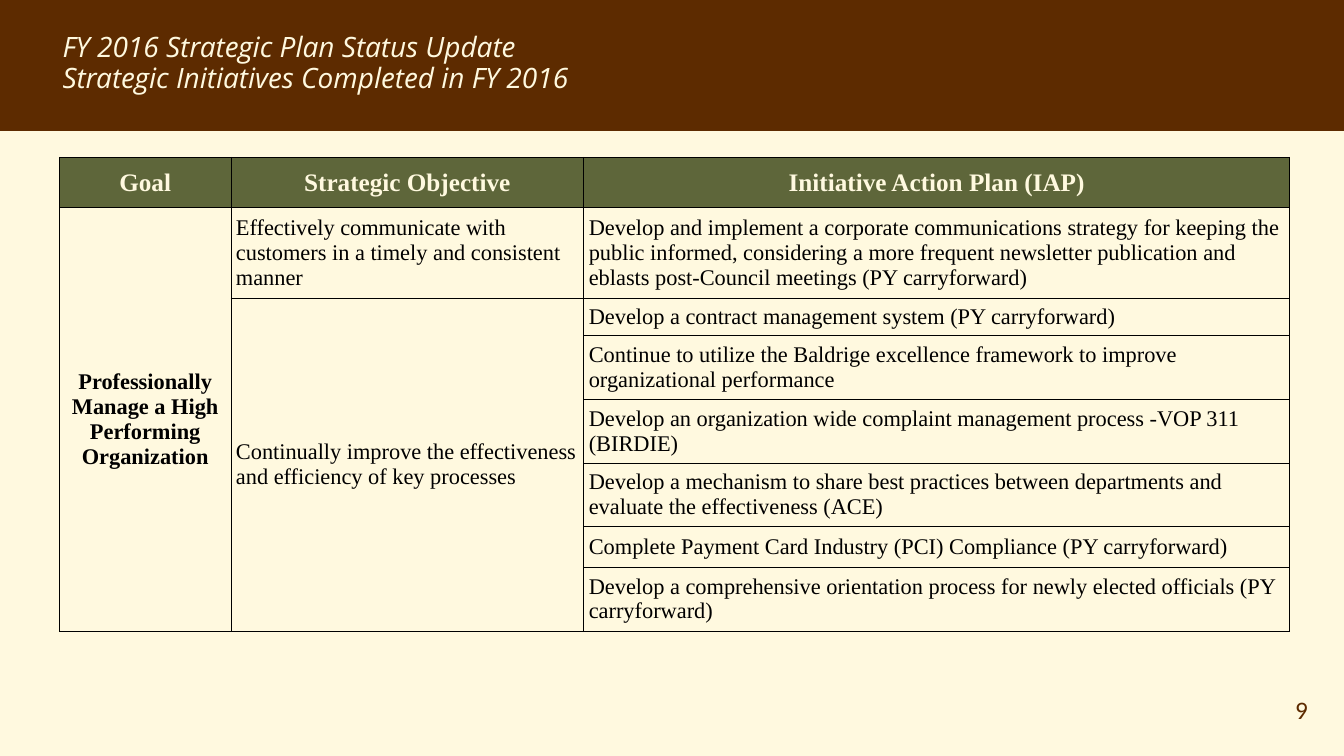
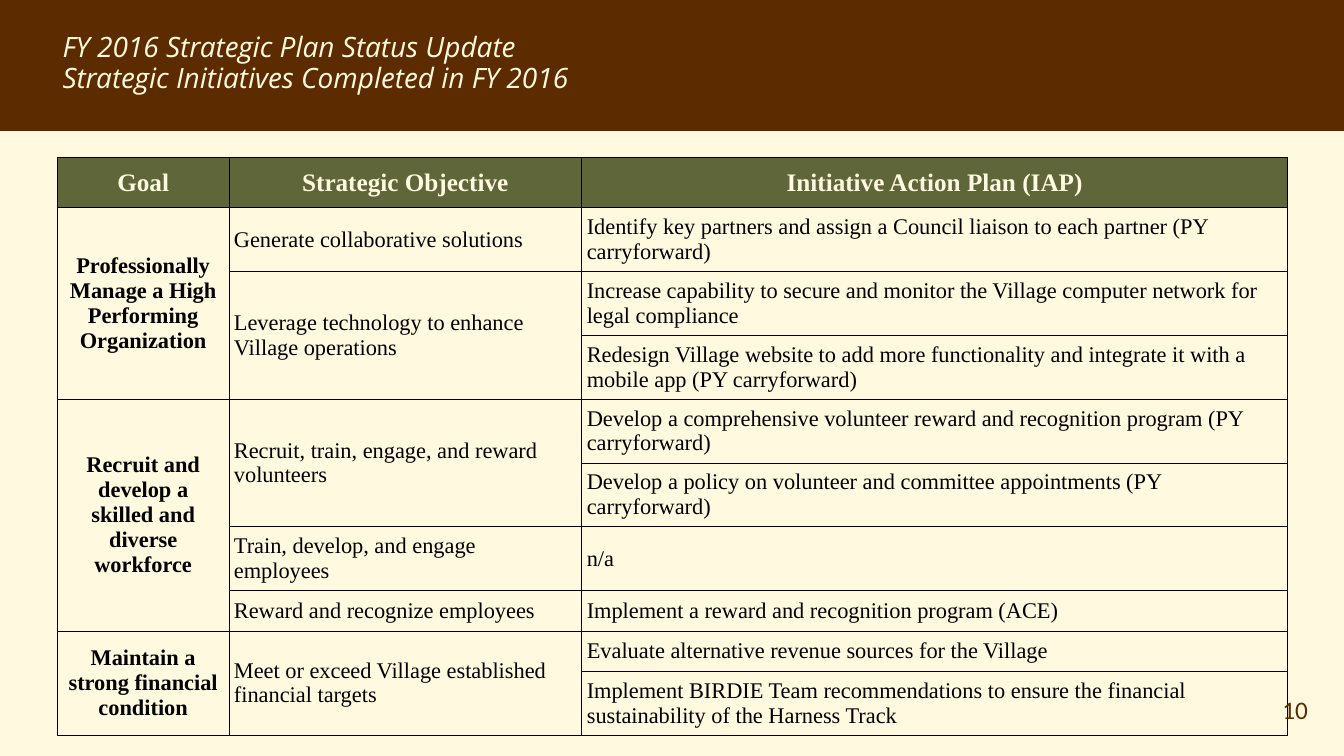
from dataclasses import dataclass

from lxml import etree
from pptx import Presentation
from pptx import util as u
from pptx.dml.color import RGBColor
from pptx.enum import shapes, text
from pptx.oxml import ns


@dataclass(frozen=True)
class Theme:
    cream: RGBColor = RGBColor(0xFF, 0xF9, 0xDF)
    brown: RGBColor = RGBColor(0x5D, 0x2B, 0x00)
    olive: RGBColor = RGBColor(0x5E, 0x66, 0x3A)
    black: RGBColor = RGBColor(0x00, 0x00, 0x00)
    title_font: str = "Open Sans"
    table_font: str = "Times New Roman"
    number_font: str = "Calibri"
    title_size: u.Length = u.Pt(20)
    header_size: u.Length = u.Pt(18)
    body_size: u.Length = u.Pt(16)
    number_size: u.Length = u.Pt(18)
    rule_width: u.Length = u.Pt(0.5)


@dataclass(frozen=True)
class Plan:
    wording: str
    lines: int = 2
    min_height: float = 0.4


@dataclass(frozen=True)
class Objective:
    wording: str
    plans: list[Plan]


@dataclass(frozen=True)
class Goal:
    wording: str
    objectives: list[Objective]


@dataclass(frozen=True)
class StatusPage:
    number: int
    table_left: float
    goals: list[Goal]


THEME = Theme()
TITLE = "FY 2016 Strategic Plan Status Update\nStrategic Initiatives Completed in FY 2016"
HEADINGS = ("Goal", "Strategic Objective", "Initiative Action Plan (IAP)")
COLUMN_WIDTHS = (1.7, 3.5, 7)
HEADER_HEIGHT = u.Inches(0.5)
TABLE_TOP = u.Inches(1.56)
LINE_PITCH = u.Pt(19.2)
CELL_INSET = u.Inches(0.05)
MANAGE = "Professionally Manage a High Performing Organization"

PAGES = [
    StatusPage(9, 0.59, [
        Goal(MANAGE, [
            Objective("Effectively communicate with customers in a timely and consistent manner", [
                Plan("Develop and implement a corporate communications strategy for keeping the "
                     "public informed, considering a more frequent newsletter publication and "
                     "eblasts post-Council meetings (PY carryforward)", lines=3),
            ]),
            Objective("Continually improve the effectiveness and efficiency of key processes", [
                Plan("Develop a contract management system (PY carryforward)",
                     lines=1, min_height=0.2),
                Plan("Continue to utilize the Baldrige excellence framework to improve "
                     "organizational performance"),
                Plan("Develop an organization wide complaint management process -VOP 311 (BIRDIE)"),
                Plan("Develop a mechanism to share best practices between departments and "
                     "evaluate the effectiveness (ACE)"),
                Plan("Complete Payment Card Industry (PCI) Compliance (PY carryforward)", lines=1),
                Plan("Develop a comprehensive orientation process for newly elected officials "
                     "(PY carryforward)"),
            ]),
        ]),
    ]),
    StatusPage(10, 0.57, [
        Goal(MANAGE, [
            Objective("Generate collaborative solutions", [
                Plan("Identify key partners and assign a Council liaison to each partner "
                     "(PY carryforward)"),
            ]),
            Objective("Leverage technology to enhance Village operations", [
                Plan("Increase capability to secure and monitor the Village computer network for "
                     "legal compliance"),
                Plan("Redesign Village website to add more functionality and integrate it with a "
                     "mobile app (PY carryforward)"),
            ]),
        ]),
        Goal("Recruit and develop a skilled and diverse workforce", [
            Objective("Recruit, train, engage, and reward volunteers", [
                Plan("Develop a comprehensive volunteer reward and recognition program "
                     "(PY carryforward)"),
                Plan("Develop a policy on volunteer and committee appointments (PY carryforward)"),
            ]),
            Objective("Train, develop, and engage employees", [Plan("n/a")]),
            Objective("Reward and recognize employees", [
                Plan("Implement a reward and recognition program (ACE)", lines=1),
            ]),
        ]),
        Goal("Maintain a strong financial condition", [
            Objective("Meet or exceed Village established financial targets", [
                Plan("Evaluate alternative revenue sources for the Village", lines=1),
                Plan("Implement BIRDIE Team recommendations to ensure the financial "
                     "sustainability of the Harness Track"),
            ]),
        ]),
    ]),
]


def style_text(frame, font: str, size: u.Length, color: RGBColor, align,
               bold: bool = False, italic: bool = False) -> None:
    for paragraph in frame.paragraphs:
        paragraph.alignment = align
        for run in paragraph.runs:
            run.font.name, run.font.size = font, size
            run.font.bold, run.font.italic = bold, italic
            run.font.color.rgb = color


def prepare_layout(prs):
    """Give the title layout its background, band and title position."""
    layout = prs.slide_layouts[5]
    prs.slide_master.background.fill.solid()
    prs.slide_master.background.fill.fore_color.rgb = THEME.cream
    heading = layout.placeholders[0]
    heading.left, heading.top = u.Inches(0.52), u.Inches(0.25)
    heading.width, heading.height = u.Inches(12.29), u.Inches(0.77)
    return layout


def move_band_to_layout(slide, layout, width: u.Length) -> None:
    band = slide.shapes.add_shape(shapes.MSO_SHAPE.RECTANGLE, 0, 0, width, u.Inches(1.3))
    band.shadow.inherit = False
    band.fill.solid()
    band.fill.fore_color.rgb = THEME.brown
    band.line.fill.background()
    layout.shapes._spTree.insert(2, band._element)


def add_borders(cell) -> None:
    properties = cell._tc.get_or_add_tcPr()
    for side in ("lnL", "lnR", "lnT", "lnB"):
        line = etree.SubElement(properties, ns.qn(f"a:{side}"), w=str(THEME.rule_width))
        fill = etree.SubElement(line, ns.qn("a:solidFill"))
        etree.SubElement(fill, ns.qn("a:srgbClr"), val=str(THEME.black))


def fill_cell(cell, wording: str, size: u.Length, color: RGBColor, strong: bool) -> None:
    cell.text_frame.text = wording
    cell.vertical_anchor = text.MSO_ANCHOR.MIDDLE
    if not strong:
        cell.margin_left = cell.margin_right = CELL_INSET
        cell.margin_top = cell.margin_bottom = CELL_INSET
    align = text.PP_ALIGN.CENTER if strong else text.PP_ALIGN.LEFT
    style_text(cell.text_frame, THEME.table_font, size, color, align, bold=strong)


def add_group(table, row: int, column: int, span: int, wording: str) -> None:
    """Write a goal or objective over the rows of its plans."""
    cell = table.cell(row, column)
    if span > 1:
        cell.merge(table.cell(row + span - 1, column))
    fill_cell(cell, wording, THEME.body_size, THEME.black, strong=column == 0)


def add_plan_table(slide, page: StatusPage) -> None:
    plans = [p for goal in page.goals for objective in goal.objectives for p in objective.plans]
    heights = [HEADER_HEIGHT] + [
        max(u.Inches(p.min_height), 2 * CELL_INSET + p.lines * LINE_PITCH) for p in plans]
    table = slide.shapes.add_table(
        len(heights), len(HEADINGS), u.Inches(page.table_left), TABLE_TOP,
        u.Inches(sum(COLUMN_WIDTHS)), sum(heights)).table
    table.horz_banding = table.first_row = False
    for column, width in zip(table.columns, COLUMN_WIDTHS):
        column.width = u.Inches(width)
    for row, height in zip(table.rows, heights):
        row.height = height
    for cell in table.iter_cells():
        add_borders(cell)
        cell.fill.background()

    # Header row
    for column, heading in enumerate(HEADINGS):
        cell = table.cell(0, column)
        cell.fill.solid()
        cell.fill.fore_color.rgb = THEME.olive
        fill_cell(cell, heading, THEME.header_size, THEME.cream, strong=True)

    # Goals, objectives and plans
    row = 1
    for goal in page.goals:
        add_group(table, row, 0, sum(len(o.plans) for o in goal.objectives), goal.wording)
        for objective in goal.objectives:
            add_group(table, row, 1, len(objective.plans), objective.wording)
            for plan in objective.plans:
                add_group(table, row, 2, 1, plan.wording)
                row += 1


def add_page_number(slide, number: int) -> None:
    frame = slide.shapes.add_textbox(
        u.Inches(12.47), u.Inches(6.84), u.Inches(0.6), u.Inches(0.4)).text_frame
    frame.word_wrap = True
    frame.text = str(number)
    style_text(frame, THEME.number_font, THEME.number_size, THEME.brown, text.PP_ALIGN.RIGHT)


def add_status_slide(prs, layout, page: StatusPage):
    slide = prs.slides.add_slide(layout)
    frame = slide.shapes.title.text_frame
    frame.text = TITLE
    frame.auto_size = text.MSO_AUTO_SIZE.NONE
    style_text(frame, THEME.title_font, THEME.title_size, THEME.cream,
               text.PP_ALIGN.LEFT, italic=True)
    for paragraph in frame.paragraphs:
        paragraph.line_spacing = 0.9
    add_plan_table(slide, page)
    add_page_number(slide, page.number)
    return slide


def main() -> None:
    prs = Presentation()
    prs.slide_width, prs.slide_height = u.Inches(13.33), u.Inches(7.5)
    layout = prepare_layout(prs)
    slides = [add_status_slide(prs, layout, page) for page in PAGES]
    move_band_to_layout(slides[0], layout, prs.slide_width)
    prs.save("out.pptx")


if __name__ == "__main__":
    main()
